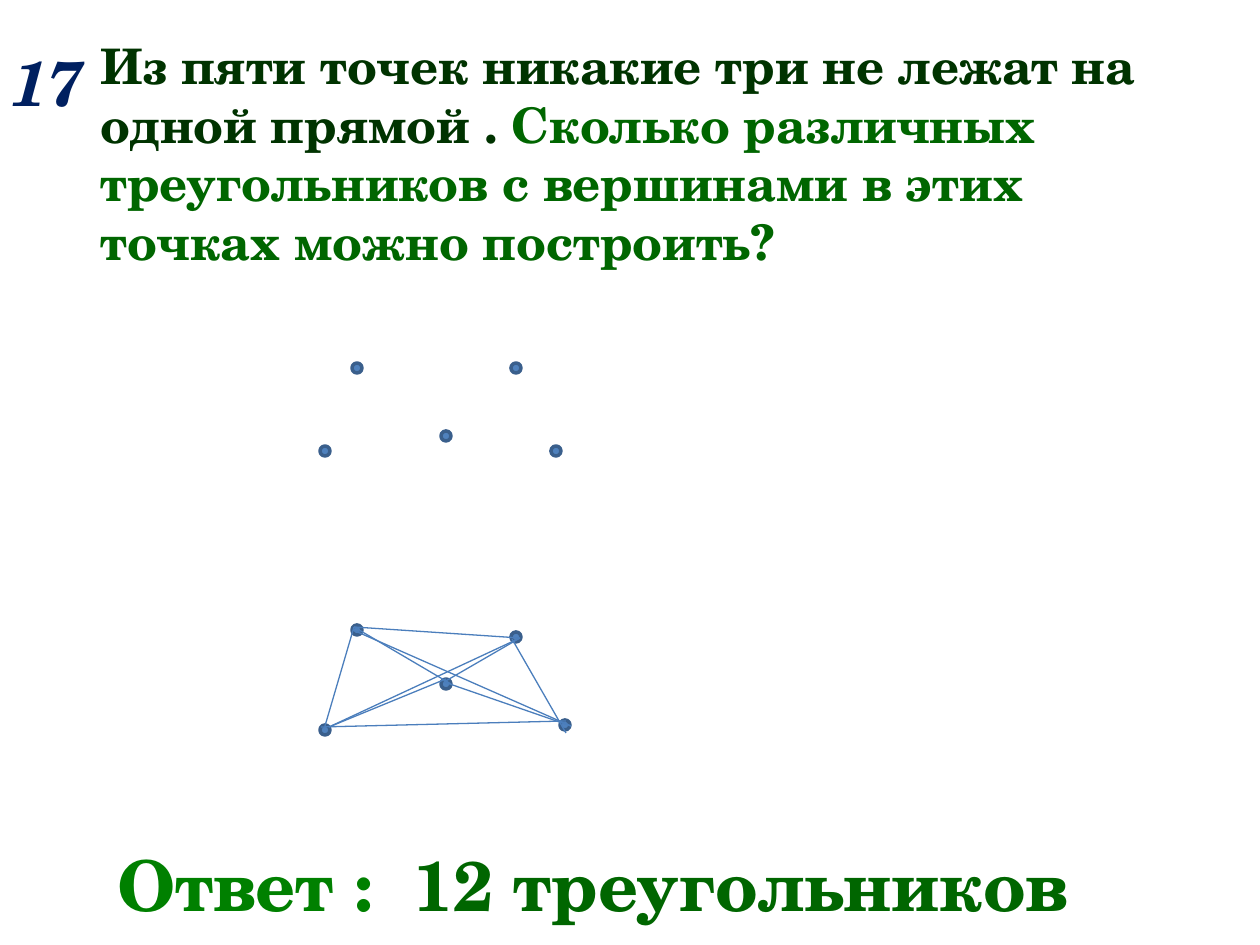
from dataclasses import dataclass

from lxml.etree import SubElement
from pptx import Presentation
from pptx.dml.color import RGBColor
from pptx.enum.shapes import MSO_CONNECTOR, MSO_SHAPE
from pptx.enum.text import MSO_ANCHOR, MSO_AUTO_SIZE, PP_ALIGN
from pptx.oxml.ns import qn
from pptx.util import Pt


@dataclass(frozen=True)
class Theme:
    font: str = "TeX Gyre Schola"
    given: str = "003300"
    asked: str = "006600"
    label: str = "008000"
    number: str = "002060"
    dot: str = "4F81BD"
    dot_edge: str = "3A5F8C"
    segment: str = "4B7EBC"
    question_size: int = 28
    number_size: int = 36
    answer_size: int = 40
    edge_width: float = 2
    segment_width: float = 0.75


THEME = Theme()
SCALE = 914400 / 126
DOT = 10

SCATTERED = [(37, 5), (196, 5), (5, 88), (126, 73), (236, 88)]
JOINED = [(37, 5), (196, 12), (5, 105), (126, 59), (245, 100)]
SEGMENTS = [
    ((5, 101), (34, 2)),
    ((200, 13), (9, 102)),
    ((126, 54), (9, 102)),
    ((246, 96), (1, 102)),
    ((34, 2), (131, 59)),
    ((200, 13), (34, 2)),
    ((200, 13), (124, 57)),
    ((192, 14), (246, 108)),
    ((251, 101), (124, 57)),
    ((33, 5), (251, 101)),
]


def px(length):
    return round(length * SCALE)


def color(value):
    return RGBColor.from_string(value)


def place(shape, box):
    shape.left, shape.top, shape.width, shape.height = map(px, box)


def prepare_text(shape):
    frame = shape.text_frame
    frame.word_wrap = True
    frame.auto_size = MSO_AUTO_SIZE.SHAPE_TO_FIT_TEXT
    frame.vertical_anchor = MSO_ANCHOR.TOP
    para = frame.paragraphs[0]
    para.alignment = PP_ALIGN.LEFT
    return para


def add_span(para, text, size, fill, italic=False):
    span = para.add_run()
    span.text = text
    span.font.name = THEME.font
    span.font.size = Pt(size)
    span.font.bold = True
    span.font.italic = italic
    span.font.color.rgb = color(fill)


def add_question(page, box):
    title = page.shapes.title
    place(title, box)
    para = prepare_text(title)
    add_span(para, "Из пяти точек никакие три не лежат на одной прямой . ",
             THEME.question_size, THEME.given)
    add_span(para, "Сколько различных треугольников с вершинами в этих точках можно построить?",
             THEME.question_size, THEME.asked)


def add_number(page, box):
    para = prepare_text(page.shapes.add_textbox(*map(px, box)))
    add_span(para, "17", THEME.number_size, THEME.number, italic=True)


def add_answer(page, box, tab_position):
    para = prepare_text(page.shapes.add_textbox(*map(px, box)))
    tabs = SubElement(para._p.get_or_add_pPr(), qn("a:tabLst"))
    SubElement(tabs, qn("a:tab"), pos=str(px(tab_position)), algn="l")
    add_span(para, "Ответ :", THEME.answer_size, THEME.label)
    add_span(para, "\t12 треугольников", THEME.answer_size, THEME.asked)


def add_figure(page, origin, points, segments=()):
    left, top = origin
    for x, y in points:
        corner = (left + x - DOT / 2, top + y - DOT / 2, DOT, DOT)
        dot = page.shapes.add_shape(MSO_SHAPE.OVAL, *map(px, corner))
        dot.shadow.inherit = False
        dot.fill.solid()
        dot.fill.fore_color.rgb = color(THEME.dot)
        dot.line.color.rgb = color(THEME.dot_edge)
        dot.line.width = Pt(THEME.edge_width)
    for (x1, y1), (x2, y2) in segments:
        ends = (left + x1, top + y1, left + x2, top + y2)
        segment = page.shapes.add_connector(MSO_CONNECTOR.STRAIGHT, *map(px, ends))
        segment.line.color.rgb = color(THEME.segment)
        segment.line.width = Pt(THEME.segment_width)
        SubElement(segment._element.spPr, qn("a:effectLst"))


def main():
    deck = Presentation()
    deck.slide_width, deck.slide_height = px(1260), px(945)
    page = deck.slides.add_slide(deck.slide_layouts[5])
    add_question(page, (88, 29, 1142, 251))
    add_number(page, (-1, 37, 115, 89))
    add_figure(page, (320, 363), SCATTERED)
    add_answer(page, (105, 835, 1047, 98), 296)
    add_figure(page, (320, 625), JOINED, SEGMENTS)
    deck.save("out.pptx")


if __name__ == "__main__":
    main()
